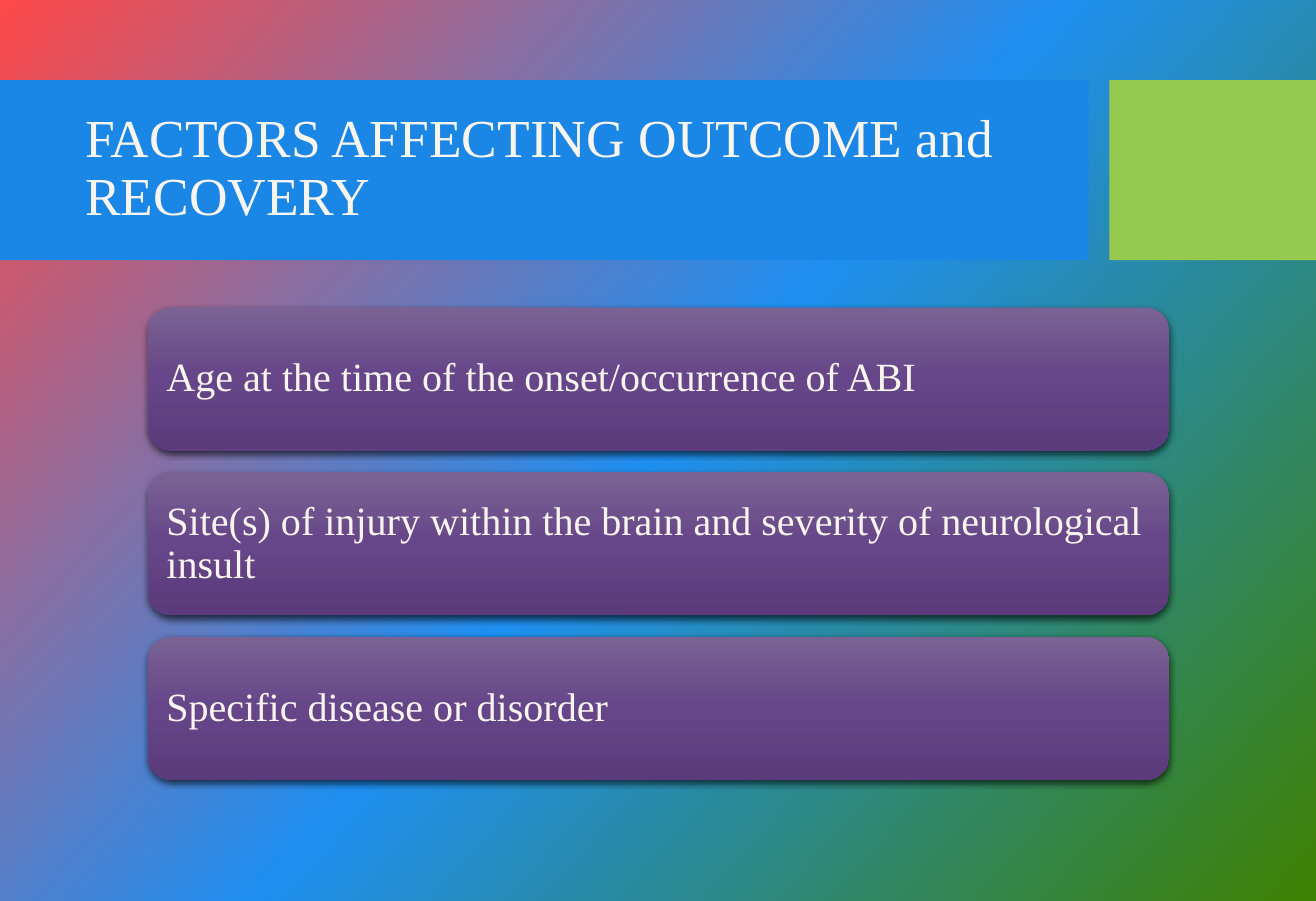
"""Builds the slide on factors affecting outcome and recovery."""
from copy import deepcopy

from lxml import etree
from pptx import Presentation
from pptx.dml.color import RGBColor
from pptx.enum import shapes, text
from pptx.oxml import ns
from pptx.util import Pt

TITLE = "FACTORS AFFECTING OUTCOME and RECOVERY"
FACTORS = [
    "Age at the time of the onset/occurrence of ABI",
    "Site(s) of injury within the brain and severity of neurological insult",
    "Specific disease or disorder",
]
COLOURS = {"band": "1A86E5", "accent": "96CA4F", "text": "F8F5EF", "shadow": "000000"}
BACKGROUND = ["FF4949", "1F8FF1", "3D8100"]
CARD_FILL = ["7A6394", "664588", "5B3B7C"]
FONT = "Times New Roman"
WIDTH, HEIGHT = 788.4, 540
BAND_TOP, BAND_HEIGHT, BAND_WIDTH, ACCENT_LEFT = 48, 108, 652.3, 664.6
CARD_LEFT, CARD_TOP, CARD_WIDTH, CARD_HEIGHT, CARD_PITCH = 88.5, 184.3, 612, 85.7, 98.7


def colour(name):
    return RGBColor.from_string(COLOURS[name])


def set_gradient(fill, element, stops, angle):
    fill.gradient()
    fill.gradient_angle = 360 - angle
    stop_list = element.xpath(".//a:gsLst")[0]
    stop_list.insert(1, deepcopy(stop_list[0]))
    for index, (stop, value) in enumerate(zip(fill.gradient_stops, stops)):
        stop.position = index / 2
        stop.color.rgb = RGBColor.from_string(value)


def add_block(page, kind, left, top, width, height):
    block = page.shapes.add_shape(kind, Pt(left), Pt(top), Pt(width), Pt(height))
    block.shadow.inherit = False
    block.line.fill.background()
    return block


def add_bar(page, left, width, name):
    bar = add_block(page, shapes.MSO_SHAPE.RECTANGLE, left, BAND_TOP, width, BAND_HEIGHT)
    bar.fill.solid()
    bar.fill.fore_color.rgb = colour(name)


def add_soft_shadow(block):
    effects = block._element.spPr.find(ns.qn("a:effectLst"))
    shadow = etree.SubElement(effects, ns.qn("a:outerShdw"), blurRad=str(Pt(4.5)),
                              dist=str(Pt(1.5)), dir="5400000", algn="ctr", rotWithShape="0")
    tint = etree.SubElement(shadow, ns.qn("a:srgbClr"), val=COLOURS["shadow"])
    etree.SubElement(tint, ns.qn("a:alpha"), val="63000")


def write(box, words, size):
    frame = box.text_frame
    frame.text = words
    frame.word_wrap = True
    frame.vertical_anchor = text.MSO_ANCHOR.MIDDLE
    frame.margin_left = frame.margin_right = Pt(7.2)
    para = frame.paragraphs[0]
    para.alignment = text.PP_ALIGN.LEFT
    para.line_spacing = 0.9
    font = para.runs[0].font
    font.name, font.size = FONT, Pt(size)
    font.color.rgb = colour("text")


def main():
    deck = Presentation()
    deck.slide_width, deck.slide_height = Pt(WIDTH), Pt(HEIGHT)
    page = deck.slides.add_slide(deck.slide_layouts[6])
    set_gradient(page.background.fill, page._element, BACKGROUND, 42)

    add_bar(page, 0, BAND_WIDTH, "band")
    add_bar(page, ACCENT_LEFT, WIDTH - ACCENT_LEFT, "accent")
    title = page.shapes.add_textbox(Pt(44), Pt(59), Pt(621.4), Pt(85))
    write(title, TITLE, 32)

    for index, factor in enumerate(FACTORS):
        card = add_block(page, shapes.MSO_SHAPE.ROUNDED_RECTANGLE, CARD_LEFT,
                         CARD_TOP + index * CARD_PITCH, CARD_WIDTH, CARD_HEIGHT)
        set_gradient(card.fill, card._element, CARD_FILL, 90)
        add_soft_shadow(card)
        write(card, factor, 24)

    deck.save("out.pptx")


if __name__ == "__main__":
    main()
